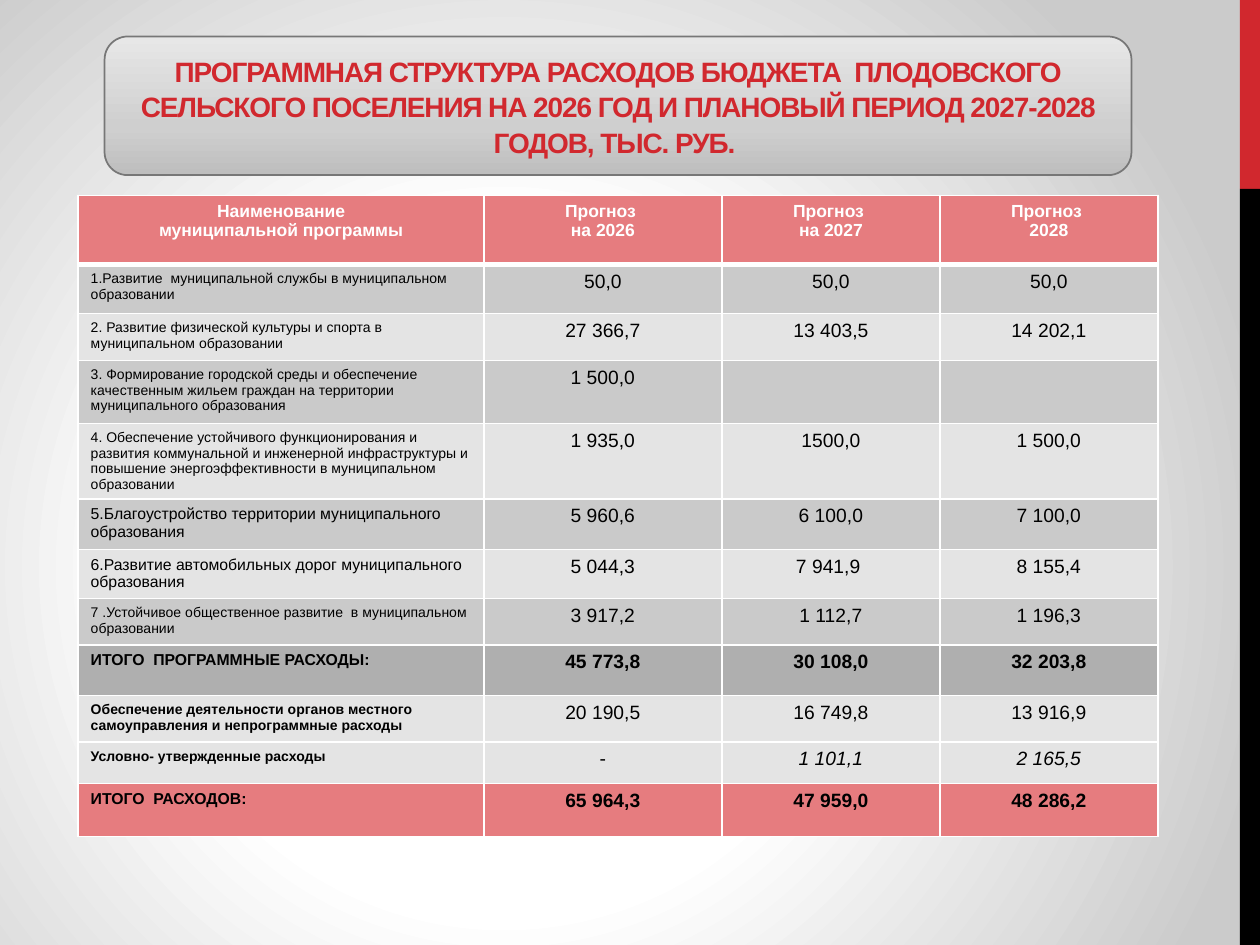
from lxml import etree
from pptx import Presentation
from pptx.dml.color import RGBColor
from pptx.enum.shapes import MSO_SHAPE as SHAPE
from pptx.enum.text import MSO_ANCHOR as ANCHOR, PP_ALIGN as ALIGN
from pptx.oxml import parse_xml
from pptx.oxml.ns import nsdecls, qn
from pptx.util import Inches, Pt

RED = RGBColor(0xD1, 0x28, 0x2E)
ROSE = RGBColor(0xE6, 0x7C, 0x7F)
BLACK = RGBColor(0, 0, 0)
WHITE = RGBColor(255, 255, 255)
DARK = RGBColor(0xAF, 0xAF, 0xAF)
MID = RGBColor(0xCA, 0xCA, 0xCA)
LIGHT = RGBColor(0xE4, 0xE4, 0xE4)
OUTLINE = RGBColor(0x77, 0x77, 0x77)

TITLE = ("ПРОГРАММНАЯ СТРУКТУРА РАСХОДОВ БЮДЖЕТА  ПЛОДОВСКОГО СЕЛЬСКОГО ПОСЕЛЕНИЯ "
         "НА 2026 ГОД И ПЛАНОВЫЙ ПЕРИОД 2027-2028 ГОДОВ, ТЫС. РУБ. ")
HEADER = ["Наименование\nмуниципальной программы", "Прогноз \nна 2026",
          "Прогноз \nна 2027", "Прогноз \n2028"]
PROGRAMS = [
    ("1.Развитие  муниципальной службы в муниципальном образовании", 8, "50,0", "50,0", "50,0"),
    ("2. Развитие физической культуры и спорта в муниципальном образовании", 8,
     "27 366,7", "13 403,5", "14 202,1"),
    ("3. Формирование городской среды и обеспечение качественным жильем граждан "
     "на территории муниципального образования", 8, "1 500,0", "", ""),
    ("4. Обеспечение устойчивого функционирования и развития коммунальной и инженерной "
     "инфраструктуры и повышение энергоэффективности в муниципальном образовании", 8,
     "1 935,0", "1500,0", "1 500,0"),
    ("5.Благоустройство территории муниципального образования", 9,
     "5 960,6", "6 100,0", "7 100,0"),
    ("6.Развитие автомобильных дорог муниципального образования", 9,
     "5 044,3", "7 941,9 ", "8 155,4"),
    ("7 .Устойчивое общественное развитие  в муниципальном образовании", 8,
     "3 917,2", "1 112,7", "1 196,3"),
]
SUMMARY = [
    (DARK, "ИТОГО  ПРОГРАММНЫЕ РАСХОДЫ:", 9, "45 773,8", "30 108,0", "32 203,8"),
    (LIGHT, "Обеспечение деятельности органов местного самоуправления и непрограммные расходы", 8,
     "20 190,5", "16 749,8", "13 916,9"),
    (LIGHT, "Условно- утвержденные расходы", 8, "-", "1 101,1", "2 165,5"),
    (ROSE, "ИТОГО  РАСХОДОВ:", 9, "65 964,3", "47 959,0", "48 286,2"),
]
ITALIC_VALUES = {"1 101,1", "2 165,5"}
COLS = [3.22, 1.89, 1.73, 1.73]
ROWS = [0.55, 0.39, 0.37, 0.5, 0.55, 0.4, 0.39, 0.37, 0.4, 0.37, 0.33, 0.42]
SIDE_BARS = [(0, 1.5, RED), (1.5, 6, BLACK)]
BACK_STOPS = [(0, "FFFFFF"), (44, "FFFFFF"), (100, "CBCBCB")]
BACK_SHADE = ('<a:path path="circle"><a:fillToRect l="40000" t="60000" '
              'r="60000" b="40000"/></a:path>')
TITLE_STOPS = [(0, "BEBEBE"), (35, "CFCFCF"), (100, "E7E7E7")]
TITLE_SHADE = '<a:lin ang="16200000" scaled="0"/>'


def set_gradient(fill, element, stops, shade):
    fill.gradient()
    old = element.find(".//" + qn("a:gradFill"))
    gs = "".join(f'<a:gs pos="{pos * 1000}"><a:srgbClr val="{color}"/></a:gs>'
                 for pos, color in stops)
    new = parse_xml(f'<a:gradFill {nsdecls("a")} rotWithShape="1">'
                    f'<a:gsLst>{gs}</a:gsLst>{shade}</a:gradFill>')
    old.getparent().replace(old, new)


def add_box(s, kind, x, y, w, h):
    sp = s.shapes.add_shape(kind, Inches(x), Inches(y), Inches(w), Inches(h))
    sp.shadow.inherit = False
    return sp


def style_text(tf, size, color, bold, align, italic=False):
    for p in tf.paragraphs:
        p.alignment = align
        for font in [p.font] + [r.font for r in p.runs]:
            font.name, font.size, font.bold, font.italic = "Arial", Pt(size), bold, italic
            font.color.rgb = color


def set_borders(cell, top, bottom):
    tcPr = cell._tc.get_or_add_tcPr()
    for i, (side, width) in enumerate([("L", 1), ("R", 1), ("T", top), ("B", bottom)]):
        ln = etree.Element(qn(f"a:ln{side}"), w=str(Pt(width)))
        solid = etree.SubElement(ln, qn("a:solidFill"))
        etree.SubElement(solid, qn("a:srgbClr"), val=str(WHITE))
        tcPr.insert(i, ln)


def fill_cell(cell, text, fill, size, color, bold, align, row):
    cell.text_frame.text = text
    style_text(cell.text_frame, size, color, bold, align, text in ITALIC_VALUES)
    cell.fill.solid()
    cell.fill.fore_color.rgb = fill
    set_borders(cell, 3 if row == 1 else 1, 3 if row == 0 else 1)


def add_budget_table(s):
    frame = s.shapes.add_table(len(ROWS), len(COLS), Inches(0.62), Inches(1.55),
                               Inches(sum(COLS)), Inches(sum(ROWS)))
    table = frame.table
    table.horz_banding = False
    for column, width in zip(table.columns, COLS):
        column.width = Inches(width)
    for row, height in zip(table.rows, ROWS):
        row.height = Inches(height)
    for j, text in enumerate(HEADER):
        fill_cell(table.cell(0, j), text, ROSE, 10, WHITE, True, ALIGN.CENTER, 0)
    body = [((MID, LIGHT)[i % 2], *row, False) for i, row in enumerate(PROGRAMS)]
    body += [(*row, True) for row in SUMMARY]
    for i, (fill, label, size, *values, bold) in enumerate(body, 1):
        fill_cell(table.cell(i, 0), label, fill, size, BLACK, bold, ALIGN.LEFT, i)
        for j, value in enumerate(values, 1):
            fill_cell(table.cell(i, j), value, fill, 11, BLACK,
                      fill in (DARK, ROSE), ALIGN.CENTER, i)


def add_title(s):
    sp = add_box(s, SHAPE.ROUNDED_RECTANGLE, 0.83, 0.29, 8.15, 1.1)
    set_gradient(sp.fill, sp.element, TITLE_STOPS, TITLE_SHADE)
    sp.line.color.rgb = OUTLINE
    sp.line.width = Pt(1)
    tf = sp.text_frame
    tf.word_wrap = True
    tf.vertical_anchor = ANCHOR.MIDDLE
    tf.text = TITLE
    style_text(tf, 16, RED, True, ALIGN.CENTER)
    p = tf.paragraphs[0]
    p.line_spacing = 1.05
    p.runs[0]._r.get_or_add_rPr().set("spc", "-60")


def main():
    prs = Presentation()
    prs.slide_width, prs.slide_height = Inches(10), Inches(7.5)
    s = prs.slides.add_slide(prs.slide_layouts[6])
    set_gradient(s.background.fill, s.element, BACK_STOPS, BACK_SHADE)
    for y, height, color in SIDE_BARS:
        bar = add_box(s, SHAPE.RECTANGLE, 9.84, y, 0.16, height)
        bar.fill.solid()
        bar.fill.fore_color.rgb = color
        bar.line.fill.background()
    add_budget_table(s)
    add_title(s)
    prs.save("out.pptx")


if __name__ == "__main__":
    main()
